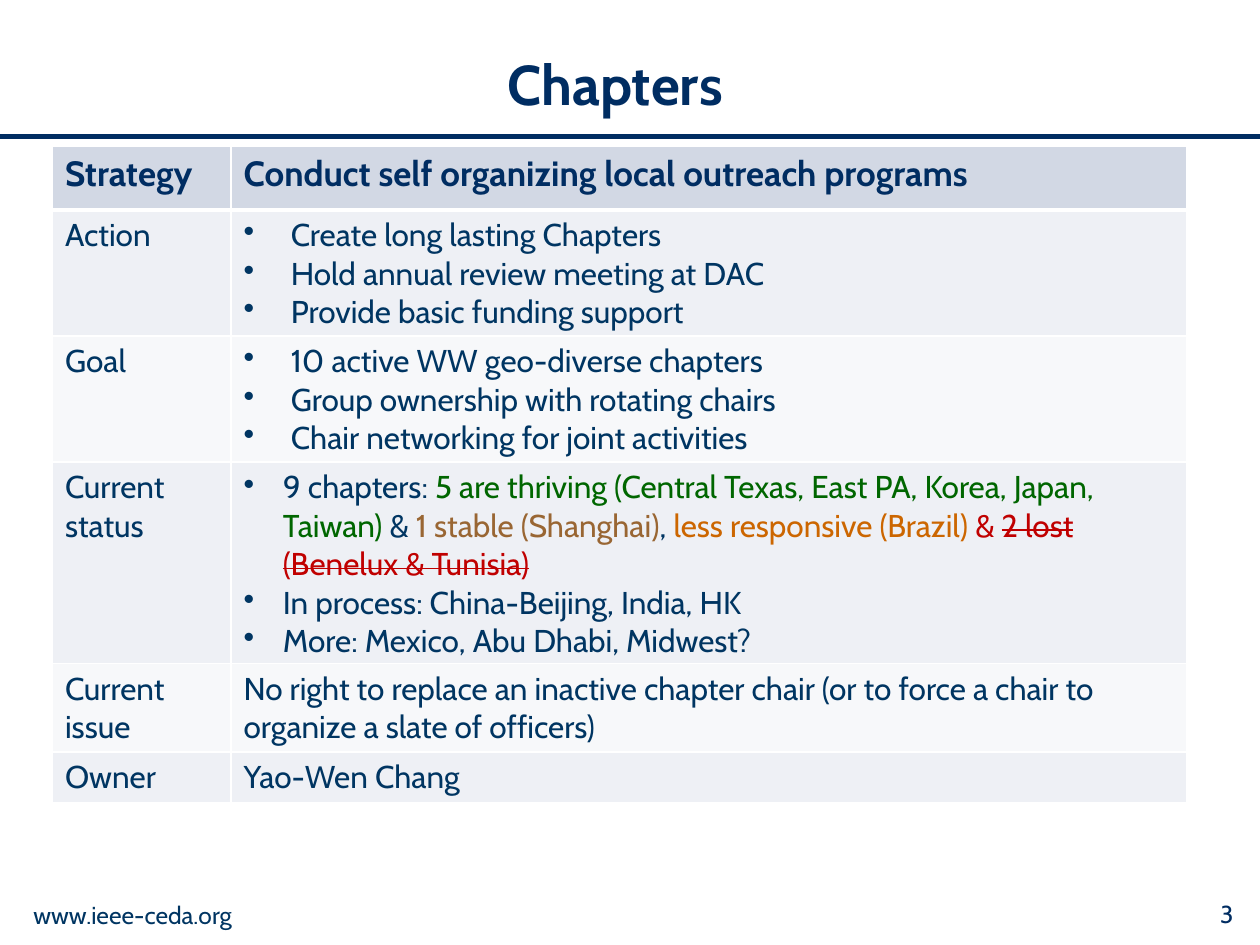
from dataclasses import dataclass

from lxml import etree
from pptx import Presentation
from pptx.dml.color import RGBColor
from pptx.enum.shapes import MSO_CONNECTOR
from pptx.enum.text import MSO_ANCHOR, PP_ALIGN
from pptx.oxml.ns import qn
from pptx.util import Pt

LEFT, CENTER, RIGHT = PP_ALIGN.LEFT, PP_ALIGN.CENTER, PP_ALIGN.RIGHT
MIDDLE = MSO_ANCHOR.MIDDLE
STRAIGHT = MSO_CONNECTOR.STRAIGHT


@dataclass(frozen=True)
class Theme:
    font: str = "Cabin"
    navy: str = "002D62"
    ink: str = "003562"
    thriving: str = "006600"
    stable: str = "996633"
    slow: str = "CC6600"
    lost: str = "C00000"
    grid: str = "FFFFFF"
    header: str = "D2D8E4"
    bands: tuple = ("EEF0F5", "F7F8FA")
    title_size: int = 32
    header_size: int = 20
    body_size: int = 18
    footer_size: int = 14


THEME = Theme()

HEADINGS = ("Strategy", "Conduct self organizing local outreach programs")
CHAPTER_STATUS = [
    ("9 chapters: ", {}),
    ("5 are thriving (Central Texas, East PA, Korea, Japan, Taiwan) ", {"color": THEME.thriving}),
    ("& ", {}),
    ("1 stable (Shanghai)", {"color": THEME.stable}),
    (", ", {}),
    ("less responsive (Brazil) ", {"color": THEME.slow}),
    ("& ", {"color": THEME.lost}),
    ("2 lost (Benelux & Tunisia)", {"color": THEME.lost, "strike": True}),
]
TOPICS = [
    ("Action", 27, ["Create long lasting Chapters",
                    "Hold annual review meeting at DAC",
                    "Provide basic funding support"]),
    ("Goal", 27, ["10 active WW geo-diverse chapters",
                  "Group ownership with rotating chairs",
                  "Chair networking for joint activities"]),
    ("Current status", 22.5, [CHAPTER_STATUS,
                              "In process: China-Beijing, India, HK",
                              "More: Mexico, Abu Dhabi, Midwest?"]),
    ("Current issue", 0, ["No right to replace an inactive chapter chair "
                          "(or to force a chair to organize a slate of officers)"]),
    ("Owner", 0, ["Yao-Wen Chang"]),
]
COLUMN_WIDTHS = (102, 546)
ROW_HEIGHTS = (36.5, 29.2, 29.2, 103, 29.2, 29.2)


def add_run(paragraph, text, size=THEME.body_size, color=THEME.ink, bold=False, strike=False):
    run = paragraph.add_run()
    run.text = text
    run.font.name = THEME.font
    run.font.size = Pt(size)
    run.font.bold = bold
    run.font.color.rgb = RGBColor.from_string(color)
    if strike:
        run.font._element.set("strike", "sngStrike")


def add_bullet(paragraph, hanging):
    properties = paragraph._p.get_or_add_pPr()
    properties.set("marL", str(Pt(hanging)))
    properties.set("indent", str(-Pt(hanging)))
    etree.SubElement(properties, qn("a:buChar"), char="•")


def set_borders(cell, widths):
    properties = cell._tc.get_or_add_tcPr()
    for side, width in widths.items():
        border = etree.SubElement(properties, qn(f"a:ln{side}"), w=str(Pt(width)))
        fill = etree.SubElement(border, qn("a:solidFill"))
        etree.SubElement(fill, qn("a:srgbClr"), val=THEME.grid)


class SlideBuilder:
    """Adds themed elements to one slide."""

    def __init__(self, slide, theme):
        self.slide = slide
        self.theme = theme

    def rule(self, y, width, weight):
        rule = self.slide.shapes.add_connector(STRAIGHT, 0, Pt(y), Pt(width), Pt(y))
        rule.line.color.rgb = RGBColor.from_string(self.theme.navy)
        rule.line.width = Pt(weight)
        etree.SubElement(rule._element.spPr, qn("a:effectLst"))

    def text(self, content, left, top, width, height, align=LEFT, **style):
        box = self.slide.shapes.add_textbox(Pt(left), Pt(top), Pt(width), Pt(height))
        frame = box.text_frame
        frame.word_wrap = True
        frame.vertical_anchor = MIDDLE
        paragraph = frame.paragraphs[0]
        paragraph.alignment = align
        add_run(paragraph, content, **style)

    def cell(self, cell, paragraphs, fill, borders, hanging=0, **style):
        set_borders(cell, borders)
        cell.fill.solid()
        cell.fill.fore_color.rgb = RGBColor.from_string(fill)
        frame = cell.text_frame
        for index, content in enumerate(paragraphs):
            paragraph = frame.add_paragraph() if index else frame.paragraphs[0]
            if hanging:
                add_bullet(paragraph, hanging)
            pieces = [(content, {})] if isinstance(content, str) else content
            for text, emphasis in pieces:
                add_run(paragraph, text, **{**style, **emphasis})

    def strategy_table(self, left, top):
        frame = self.slide.shapes.add_table(
            len(ROW_HEIGHTS), len(COLUMN_WIDTHS), Pt(left), Pt(top),
            Pt(sum(COLUMN_WIDTHS)), Pt(sum(ROW_HEIGHTS)))
        table = frame.table
        table.horz_banding = False
        for column, width in zip(table.columns, COLUMN_WIDTHS):
            column.width = Pt(width)
        for row, height in zip(table.rows, ROW_HEIGHTS):
            row.height = Pt(height)
        for column, heading in enumerate(HEADINGS):
            self.cell(table.cell(0, column), [heading], self.theme.header,
                      {"L": 1, "R": 1, "T": 1, "B": 3},
                      size=self.theme.header_size, color=self.theme.navy, bold=True)
        borders = {"L": 1, "R": 1, "B": 1}
        for row, (label, hanging, details) in enumerate(TOPICS, start=1):
            band = self.theme.bands[(row - 1) % 2]
            self.cell(table.cell(row, 0), [label], band, borders)
            self.cell(table.cell(row, 1), details, band, borders, hanging)


def main():
    deck = Presentation()
    deck.slide_width, deck.slide_height = Pt(720), Pt(540)
    page = SlideBuilder(deck.slides.add_slide(deck.slide_layouts[6]), THEME)
    page.rule(78, 720, 3)
    page.text("Chapters", 42, 11.5, 619, 72, CENTER,
              size=THEME.title_size, color=THEME.navy, bold=True)
    page.text("3", 642, 510, 70, 24, RIGHT, size=THEME.footer_size, color=THEME.navy)
    page.text("www.ieee-ceda.org", 12, 510, 168, 25, size=THEME.footer_size)
    page.strategy_table(30, 83.5)
    deck.save("out.pptx")


if __name__ == "__main__":
    main()
